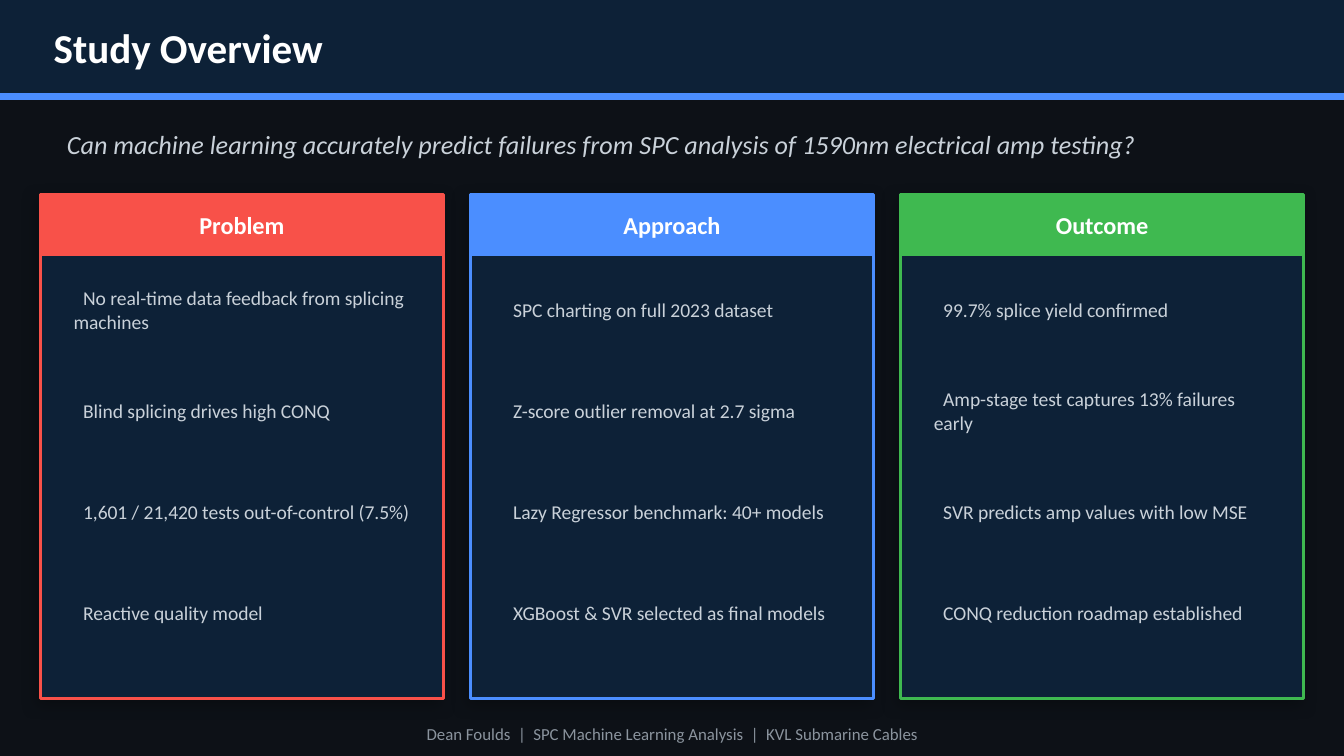
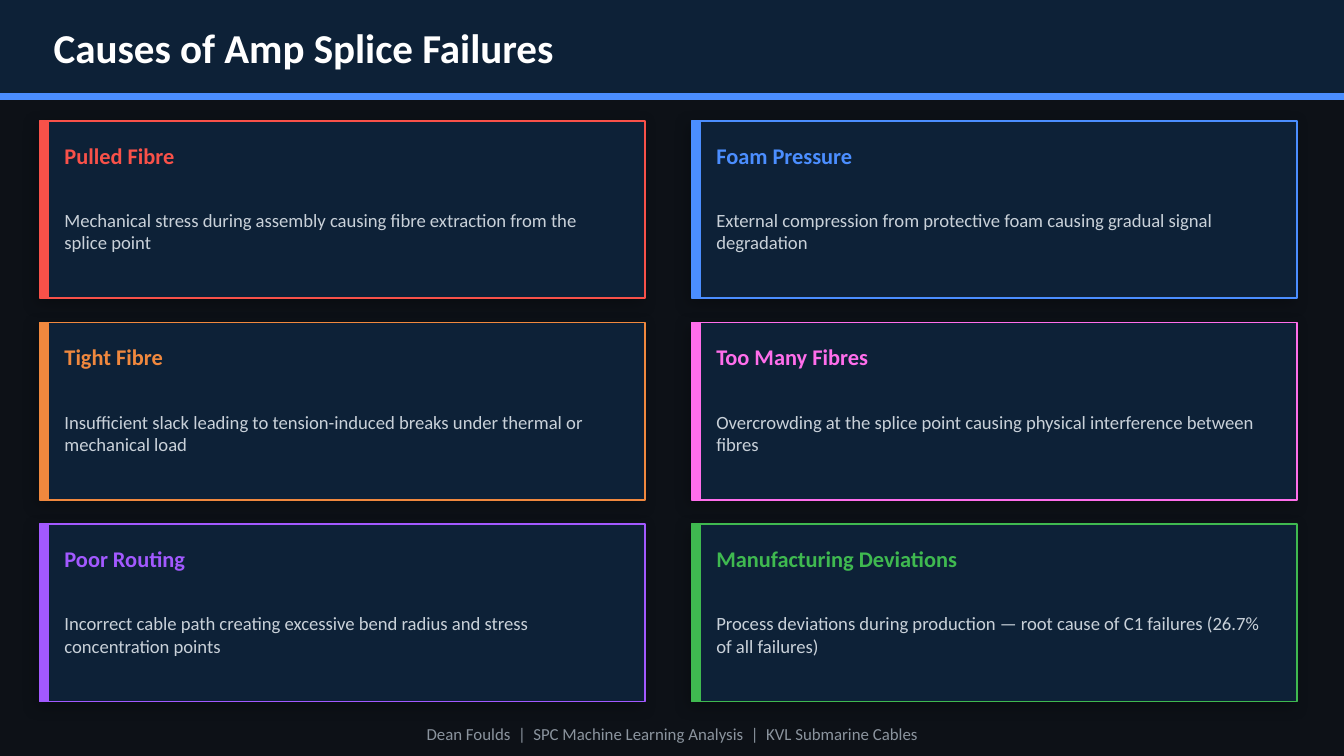
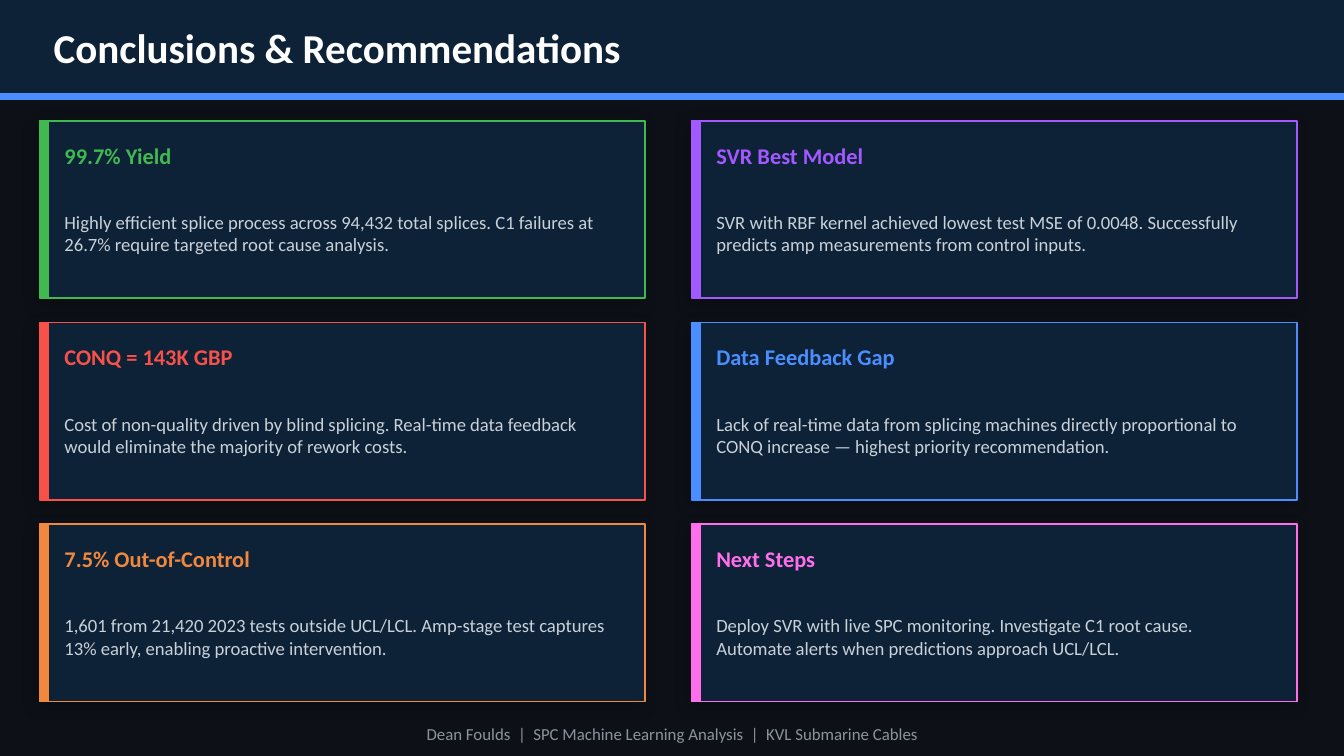
from pptx import Presentation
from pptx.dml.color import RGBColor
from pptx.enum.shapes import MSO_SHAPE
from pptx.enum.text import MSO_ANCHOR, PP_ALIGN
from pptx.oxml import parse_xml
from pptx.oxml.ns import nsdecls, qn
from pptx.util import Inches, Pt

RECTANGLE = MSO_SHAPE.RECTANGLE
MIDDLE = MSO_ANCHOR.MIDDLE
LEFT, CENTER = PP_ALIGN.LEFT, PP_ALIGN.CENTER

BACKGROUND, NAVY, WHITE = "0D1117", "0D2137", "FFFFFF"
BODY_GREY, FOOTER_GREY = "C9D1D9", "8B949E"
RED, BLUE, GREEN = "F85149", "4B8EFF", "3FB950"
ORANGE, PURPLE, PINK = "F0883E", "A259FF", "FF6EEB"

FOOTER = "Dean Foulds  |  SPC Machine Learning Analysis  |  KVL Submarine Cables"
SHADOW = (
    f'<a:outerShdw {nsdecls("a")} blurRad="{Pt(8)}" dist="{Pt(3)}" dir="8100000"'
    ' algn="bl" rotWithShape="0"><a:srgbClr val="000000">'
    '<a:alpha val="25000"/></a:srgbClr></a:outerShdw>'
)

TITLE_FONT = {"size": Pt(22), "bold": True}
QUESTION_FONT = {"size": Pt(14), "italic": True}
PANEL_HEADING_FONT = {"size": Pt(13), "bold": True}
POINT_FONT = {"size": Pt(10.5)}
CARD_HEADING_FONT = {"size": Pt(12), "bold": True}
CARD_BODY_FONT = {"size": Pt(10)}
FOOTER_FONT = {"size": Pt(9)}


def add_rectangle(slide, at, fill, line, line_width=1, shadow=False):
    box = slide.shapes.add_shape(RECTANGLE, *map(Inches, at))
    box.fill.solid()
    box.fill.fore_color.rgb = RGBColor.from_string(fill)
    box.line.color.rgb = RGBColor.from_string(line)
    box.line.width = Pt(line_width)
    box.shadow.inherit = False
    if shadow:
        box._element.spPr.find(qn("a:effectLst")).append(parse_xml(SHADOW))


def add_text(slide, at, text, color, font, align=LEFT, inset=True, first_indent=0):
    frame = slide.shapes.add_textbox(*map(Inches, at)).text_frame
    frame.word_wrap = True
    frame.vertical_anchor = MIDDLE
    if not inset:
        for side in ("left", "top", "right", "bottom"):
            setattr(frame, f"margin_{side}", 0)
    paragraph = frame.paragraphs[0]
    paragraph.alignment = align
    if first_indent:
        paragraph._p.get_or_add_pPr().set("indent", str(Inches(first_indent)))
    run = paragraph.add_run()
    run.text = text
    run.font.name = "Calibri"
    run.font.color.rgb = RGBColor.from_string(color)
    for name, value in font.items():
        setattr(run.font, name, value)


prs = Presentation()
prs.slide_width = Inches(10)
prs.slide_height = prs.slide_width * 9 // 16

# Background, title band and footer of every slide
slides = []
for title in ("Study Overview", "Causes of Amp Splice Failures",
              "Conclusions & Recommendations"):
    slide = prs.slides.add_slide(prs.slide_layouts[6])
    slide.background.fill.solid()
    slide.background.fill.fore_color.rgb = RGBColor.from_string(BACKGROUND)
    add_rectangle(slide, (0, 0, 10, 0.7), NAVY, NAVY)
    add_rectangle(slide, (0, 0.7, 10, 0.04), BLUE, BLUE)
    add_text(slide, (0.4, 0, 8.5, 0.7), title, WHITE, TITLE_FONT, inset=False)
    add_text(slide, (0, 5.3, 10, 0.32), FOOTER, FOOTER_GREY, FOOTER_FONT, CENTER)
    slides.append(slide)
overview, causes, conclusions = slides

# Study overview: research question and three panels
add_text(overview, (0.4, 0.82, 9.2, 0.5),
         "Can machine learning accurately predict failures from SPC analysis "
         "of 1590nm electrical amp testing?", BODY_GREY, QUESTION_FONT)

panels = [
    ("Problem", RED, [
        "No real-time data feedback from splicing machines",
        "Blind splicing drives high CONQ",
        "1,601 / 21,420 tests out-of-control (7.5%)",
        "Reactive quality model",
    ]),
    ("Approach", BLUE, [
        "SPC charting on full 2023 dataset",
        "Z-score outlier removal at 2.7 sigma",
        "Lazy Regressor benchmark: 40+ models",
        "XGBoost & SVR selected as final models",
    ]),
    ("Outcome", GREEN, [
        "99.7% splice yield confirmed",
        "Amp-stage test captures 13% failures early",
        "SVR predicts amp values with low MSE",
        "CONQ reduction roadmap established",
    ]),
]
for column, (heading, accent, points) in enumerate(panels):
    left = 0.3 + 3.2 * column
    heading_at = (left, 1.45, 3, 0.45)
    add_rectangle(overview, (left, 1.45, 3, 3.75), NAVY, accent, 1.5, shadow=True)
    add_rectangle(overview, heading_at, accent, accent)
    add_text(overview, heading_at, heading, WHITE, PANEL_HEADING_FONT, CENTER)
    for row, point in enumerate(points):
        add_text(overview, (left + 0.15, 1.98 + 0.75 * row, 2.7, 0.65), point,
                 BODY_GREY, POINT_FONT, first_indent=0.07)

# Card slides: two columns of three, filled column by column
cause_cards = [
    ("Pulled Fibre", RED,
     "Mechanical stress during assembly causing fibre extraction from the splice point"),
    ("Tight Fibre", ORANGE,
     "Insufficient slack leading to tension-induced breaks under thermal or "
     "mechanical load"),
    ("Poor Routing", PURPLE,
     "Incorrect cable path creating excessive bend radius and stress "
     "concentration points"),
    ("Foam Pressure", BLUE,
     "External compression from protective foam causing gradual signal degradation"),
    ("Too Many Fibres", PINK,
     "Overcrowding at the splice point causing physical interference between fibres"),
    ("Manufacturing Deviations", GREEN,
     "Process deviations during production — root cause of C1 failures (26.7% of "
     "all failures)"),
]
conclusion_cards = [
    ("99.7% Yield", GREEN,
     "Highly efficient splice process across 94,432 total splices. C1 failures at "
     "26.7% require targeted root cause analysis."),
    ("CONQ = 143K GBP", RED,
     "Cost of non-quality driven by blind splicing. Real-time data feedback would "
     "eliminate the majority of rework costs."),
    ("7.5% Out-of-Control", ORANGE,
     "1,601 from 21,420 2023 tests outside UCL/LCL. Amp-stage test captures 13% "
     "early, enabling proactive intervention."),
    ("SVR Best Model", PURPLE,
     "SVR with RBF kernel achieved lowest test MSE of 0.0048. Successfully predicts "
     "amp measurements from control inputs."),
    ("Data Feedback Gap", BLUE,
     "Lack of real-time data from splicing machines directly proportional to CONQ "
     "increase — highest priority recommendation."),
    ("Next Steps", PINK,
     "Deploy SVR with live SPC monitoring. Investigate C1 root cause. Automate "
     "alerts when predictions approach UCL/LCL."),
]
for slide, cards, body_height in ((causes, cause_cards, 0.72),
                                  (conclusions, conclusion_cards, 0.75)):
    for index, (heading, accent, body) in enumerate(cards):
        column, row = divmod(index, 3)
        left, top = 0.3 + 4.85 * column, 0.9 + 1.5 * row
        add_rectangle(slide, (left, top, 4.5, 1.32), NAVY, accent, shadow=True)
        add_rectangle(slide, (left, top, 0.06, 1.32), accent, accent)
        add_text(slide, (left + 0.18, top + 0.08, 4.1, 0.35), heading, accent,
                 CARD_HEADING_FONT, inset=False)
        add_text(slide, (left + 0.18, top + 0.46, 4.1, body_height), body, BODY_GREY,
                 CARD_BODY_FONT, inset=False)

prs.save("out.pptx")
